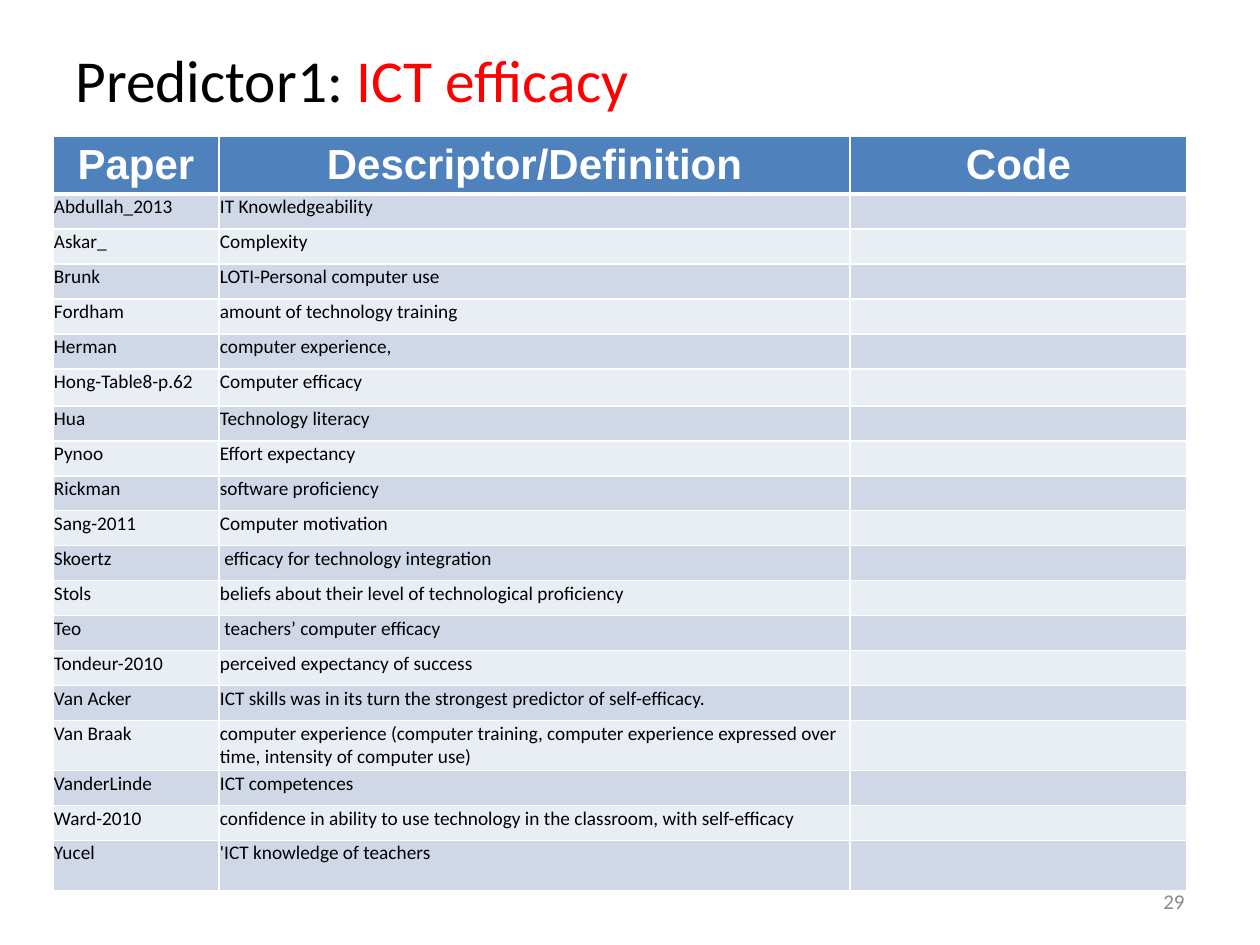
from lxml import etree
from pptx import Presentation
from pptx.dml.color import RGBColor
from pptx.enum.text import MSO_ANCHOR, MSO_AUTO_SIZE, PP_ALIGN
from pptx.oxml.ns import qn
from pptx.util import Emu, Pt

LEFT, CENTER, RIGHT = PP_ALIGN.LEFT, PP_ALIGN.CENTER, PP_ALIGN.RIGHT
MIDDLE = MSO_ANCHOR.MIDDLE
NO_AUTOFIT = MSO_AUTO_SIZE.NONE
TITLE_ONLY = 5

HEADINGS = ("Paper", "Descriptor/Definition", "Code")
PAPERS = (
    ("Abdullah_2013", "IT Knowledgeability"),
    ("Askar_", "Complexity"),
    ("Brunk", "LOTI-Personal computer use"),
    ("Fordham", "amount of technology training"),
    ("Herman", "computer experience,"),
    ("Hong-Table8-p.62", "Computer efficacy"),
    ("Hua", "Technology literacy"),
    ("Pynoo", "Effort expectancy"),
    ("Rickman", "software proficiency"),
    ("Sang-2011", "Computer motivation"),
    ("Skoertz", " efficacy for technology integration"),
    ("Stols", "beliefs about their level of technological proficiency"),
    ("Teo", " teachers’ computer efficacy"),
    ("Tondeur-2010", "perceived expectancy of success"),
    ("Van Acker", "ICT skills was in its turn the strongest predictor of self-efficacy."),
    ("Van Braak", "computer experience (computer training, computer experience "
                  "expressed over time, intensity of computer use)"),
    ("VanderLinde", "ICT competences"),
    ("Ward-2010", "confidence in ability to use technology in the classroom, with self-efficacy"),
    ("Yucel", "'ICT knowledge of teachers"),
)
COLUMN_WIDTHS = (166, 631, 337)
HEADER_HEIGHT, ROW_HEIGHT = 58, 35
TALL_ROWS = {"Hong-Table8-p.62": 37, "Van Braak": 50, "Yucel": 50}
BANDS = ("D0D8E8", "E9EDF4")


def px(length):
    """Turn whole pixels at 126 to the inch into EMU."""
    return Emu(round(length * 914400 / 126))


def color(hex_code):
    """Turn a hex string into a colour."""
    return RGBColor.from_string(hex_code)


def style(font, size, hex_code, name="Calibri", bold=False):
    """Set the look of a font."""
    font.size, font.name, font.bold = Pt(size), name, bold
    font.color.rgb = color(hex_code)


def add_title(slide, left, top, width, height):
    """Fill the title placeholder with its two-coloured heading."""
    title = slide.shapes.title
    title.left, title.top, title.width, title.height = map(px, (left, top, width, height))
    frame = title.text_frame
    frame.auto_size, frame.vertical_anchor = NO_AUTOFIT, MIDDLE
    heading = frame.paragraphs[0]
    heading.alignment = LEFT
    for wording, hex_code in (("Predictor1: ", "000000"), ("ICT efficacy", "FF0000")):
        part = heading.add_run()
        part.text = wording
        style(part.font, 34, hex_code)


def set_borders(cell, top_width, bottom_width):
    """Draw white lines round a cell."""
    properties = cell._tc.get_or_add_tcPr()
    widths = (("a:lnL", 1), ("a:lnR", 1), ("a:lnT", top_width), ("a:lnB", bottom_width))
    for position, (side, width) in enumerate(widths):
        line = etree.Element(qn(side), w=str(Pt(width)))
        fill = etree.SubElement(line, qn("a:solidFill"))
        etree.SubElement(fill, qn("a:srgbClr"), val="FFFFFF")
        properties.insert(position, line)


def fill_cell(cell, wording, hex_code, margins):
    """Set the text, fill and margins of a cell and return its paragraph."""
    cell.text_frame.text = wording
    cell.fill.solid()
    cell.fill.fore_color.rgb = color(hex_code)
    cell.margin_left, cell.margin_top, cell.margin_right, cell.margin_bottom = map(px, margins)
    return cell.text_frame.paragraphs[0]


def add_papers_table(slide, left, top):
    """Add the table of papers with its header row and banded body."""
    heights = [HEADER_HEIGHT] + [TALL_ROWS.get(paper, ROW_HEIGHT) for paper, _ in PAPERS]
    box = map(px, (left, top, sum(COLUMN_WIDTHS), sum(heights)))
    table = slide.shapes.add_table(len(heights), len(COLUMN_WIDTHS), *box).table
    for column, width in zip(table.columns, COLUMN_WIDTHS):
        column.width = px(width)
    for row, height in zip(table.rows, heights):
        row.height = px(height)
    for index, heading in enumerate(HEADINGS):
        cell = table.cell(0, index)
        paragraph = fill_cell(cell, heading, "4F81BD", (12, 6, 12, 4))
        paragraph.alignment = CENTER
        style(paragraph.runs[0].font, 24, "FFFFFF", "Arial", True)
        set_borders(cell, 1, 3)
    for number, (paper, descriptor) in enumerate(PAPERS, 1):
        band = BANDS[(number - 1) % 2]
        for index, wording in enumerate((paper, descriptor, "")):
            cell = table.cell(number, index)
            paragraph = fill_cell(cell, wording, band, (1, 1, 1, 0))
            style(paragraph.font, 11, "000000")
            for run in paragraph.runs:
                style(run.font, 11, "000000")
            set_borders(cell, 3 if number == 1 else 1, 1)


def add_page_number(slide, left, top, width, height):
    """Add the page number at the right of its box."""
    frame = slide.shapes.add_textbox(*map(px, (left, top, width, height))).text_frame
    frame.word_wrap, frame.vertical_anchor = True, MIDDLE
    frame.text = "29"
    number = frame.paragraphs[0]
    number.alignment = RIGHT
    style(number.runs[0].font, 12, "898989")


def main():
    """Build the slide and save it."""
    deck = Presentation()
    deck.slide_width, deck.slide_height = px(1260), px(945)
    slide = deck.slides.add_slide(deck.slide_layouts[TITLE_ONLY])
    add_title(slide, 63, 32, 1134, 94)
    add_papers_table(slide, 53, 136)
    add_page_number(slide, 903, 876, 294, 50)
    deck.save("out.pptx")


if __name__ == "__main__":
    main()
